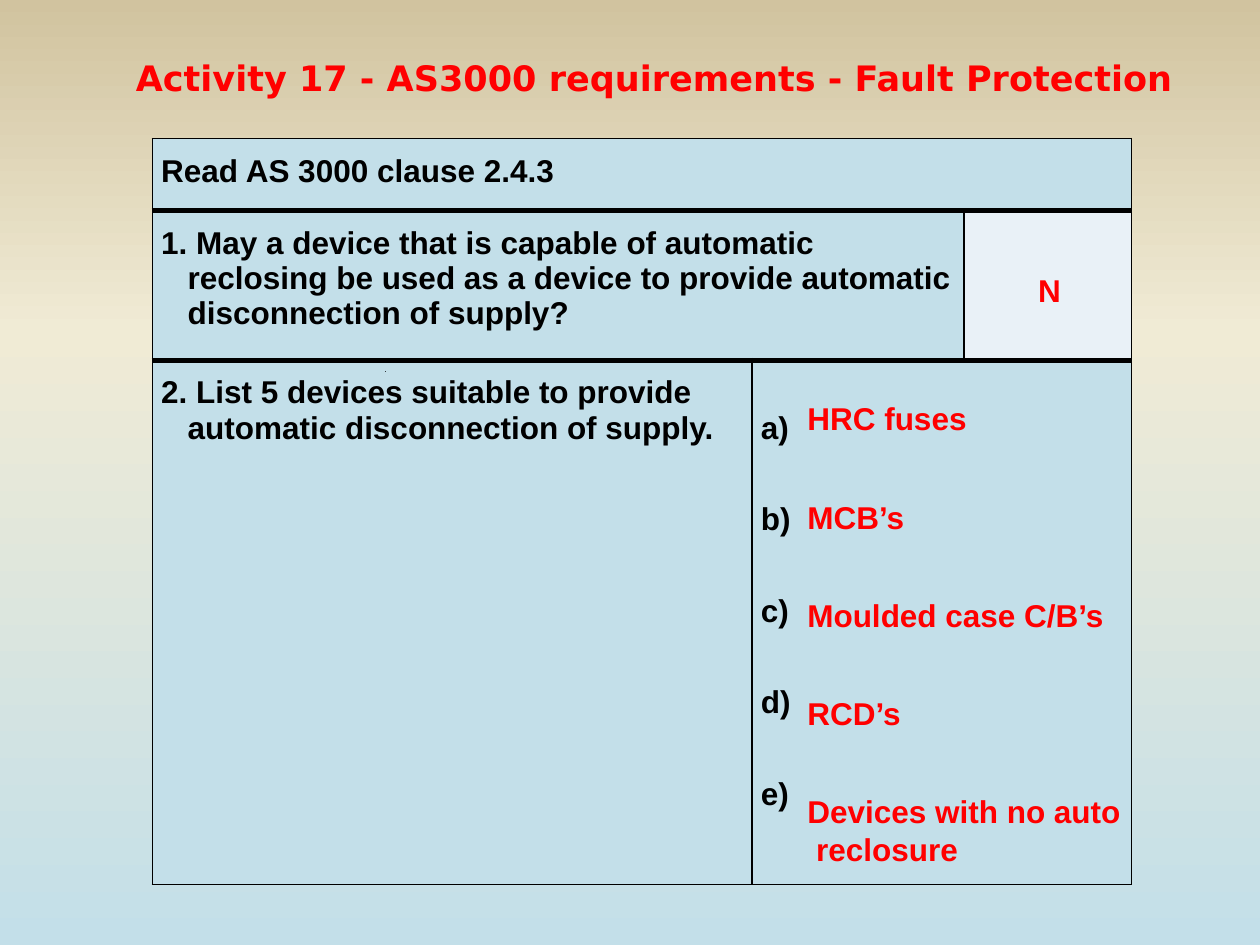
from copy import deepcopy

from lxml.etree import SubElement
from pptx import Presentation
from pptx.dml.color import RGBColor
from pptx.enum.shapes import MSO_SHAPE as Shape
from pptx.enum.text import PP_ALIGN as Align
from pptx.oxml.ns import qn
from pptx.util import Inches, Pt

BLACK = RGBColor(0, 0, 0)
RED = RGBColor(0xFF, 0, 0)
BLUE = RGBColor(0xC3, 0xDF, 0xE9)
PALE = RGBColor(0xE9, 0xF1, 0xF7)
CREAM = RGBColor(0xF0, 0xEB, 0xD5)
SAND = RGBColor(0xD1, 0xC3, 0x9F)

THIN, THICK = 1, 3


def grid(n):
    """Length of n cells on a grid of 100 columns by 75 rows."""
    return Inches(n / 10)


class Page:
    body, head = "Arial", "DejaVu Sans"
    size = 18

    def __init__(self, deck):
        self.slide = deck.slides.add_slide(deck.slide_layouts[6])
        self.shapes = self.slide.shapes

    def back(self, stops):
        fill = self.slide.background.fill
        fill.gradient()
        fill.gradient_angle = 90
        marks = self.slide.element.find(".//" + qn("a:gsLst"))
        marks.append(deepcopy(marks[-1]))
        for stop, (place, tone) in zip(fill.gradient_stops, stops):
            stop.position = place
            stop.color.rgb = tone

    def words(self, frame, lines, tone, font=None, size=None, align=None,
              before=None, after=None, space=None, hang=0):
        for i, line in enumerate(lines):
            para = frame.add_paragraph() if i else frame.paragraphs[0]
            para.text = line
            para.alignment = align
            para.space_before, para.space_after = before, after
            para.line_spacing = space
            para.font.name = font or self.body
            para.font.size = Pt(size or self.size)
            para.font.bold = True
            para.font.color.rgb = tone
            if hang:
                props = para._p.get_or_add_pPr()
                props.set("marL", str(grid(hang)))
                props.set("indent", str(-grid(hang)))

    def text(self, x, y, w, h, *lines, **style):
        frame = self.shapes.add_textbox(*map(grid, (x, y, w, h))).text_frame
        frame.word_wrap = True
        self.words(frame, lines, RED, **style)

    def dot(self, x, y):
        mark = self.shapes.add_shape(Shape.RECTANGLE, grid(x), grid(y), 0, 0)
        mark.shadow.inherit = False
        mark.fill.solid()
        mark.fill.fore_color.rgb = BLUE
        mark.line.color.rgb = BLACK
        mark.line.width = Pt(0.75)

    def table(self, x, y, cols, rows):
        frame = self.shapes.add_table(len(rows), len(cols), grid(x), grid(y),
                                      grid(sum(cols)), grid(sum(rows)))
        table = frame.table
        for col, n in zip(table.columns, cols):
            col.width = grid(n)
        last = len(rows) - 1
        for r, (row, n) in enumerate(zip(table.rows, rows)):
            row.height = grid(n)
            for cell in row.cells:
                cell.fill.solid()
                cell.fill.fore_color.rgb = BLUE
                cell.margin_left = cell.margin_right = grid(0.7)
                cell.margin_top = cell.margin_bottom = grid(1.2)
                self.edge(cell, THICK if r else THIN,
                          THICK if r < last else THIN)
        return table

    def edge(self, cell, top, low):
        props = cell._tc.get_or_add_tcPr()
        sides = {"L": THIN, "R": THIN, "T": top, "B": low}
        for i, (side, width) in enumerate(sides.items()):
            line = SubElement(props, qn("a:ln" + side), w=str(Pt(width)))
            fill = SubElement(line, qn("a:solidFill"))
            SubElement(fill, qn("a:srgbClr"), val=str(BLACK))
            props.insert(i, line)


def main():
    deck = Presentation()
    deck.slide_width, deck.slide_height = grid(100), grid(75)
    page = Page(deck)
    page.back([(0, BLUE), (0.65, CREAM), (1, SAND)])

    # Question table
    table = page.table(12.1, 11, (47.6, 16.8, 13.3), (5.7, 11.9, 41.6))
    cell = table.cell
    for r, start, end in ((0, 0, 2), (1, 0, 1), (2, 1, 2)):
        cell(r, start).merge(cell(r, end))
    cell(1, 2).fill.fore_color.rgb = PALE
    gap = Pt(6)
    page.words(cell(0, 0).text_frame, ["Read AS 3000 clause 2.4.3"], BLACK,
               align=Align.JUSTIFY, before=gap)
    asks = (
        "1. May a device that is capable of automatic reclosing be used "
        "as a device to provide automatic disconnection of supply?",
        "2. List 5 devices suitable to provide automatic disconnection "
        "of supply.",
    )
    for r, ask in enumerate(asks, 1):
        page.words(cell(r, 0).text_frame, [ask], BLACK, before=gap, hang=2.1)
    page.words(cell(2, 1).text_frame, [f"{c})" for c in "abcde"], BLACK,
               align=Align.JUSTIFY, before=gap, after=gap, space=2.0)
    page.dot(30.6, 29.5)

    # Title
    page.text(9.8, 4, 84.8, 4.4,
              "Activity 17 - AS3000 requirements - Fault Protection",
              font=page.head, size=20)

    # Answers
    page.text(78.4, 21, 9.8, 4, "N", align=Align.CENTER, before=gap)
    answers = (
        ["HRC fuses"],
        ["MCB’s"],
        ["Moulded case C/B’s"],
        ["RCD’s"],
        ["Devices with no auto", " reclosure"],
    )
    for i, lines in enumerate(answers):
        page.text(63.1, 31.2 + 7.8 * i, 44.6, 1 + 3 * len(lines), *lines)

    deck.save("out.pptx")


if __name__ == "__main__":
    main()
